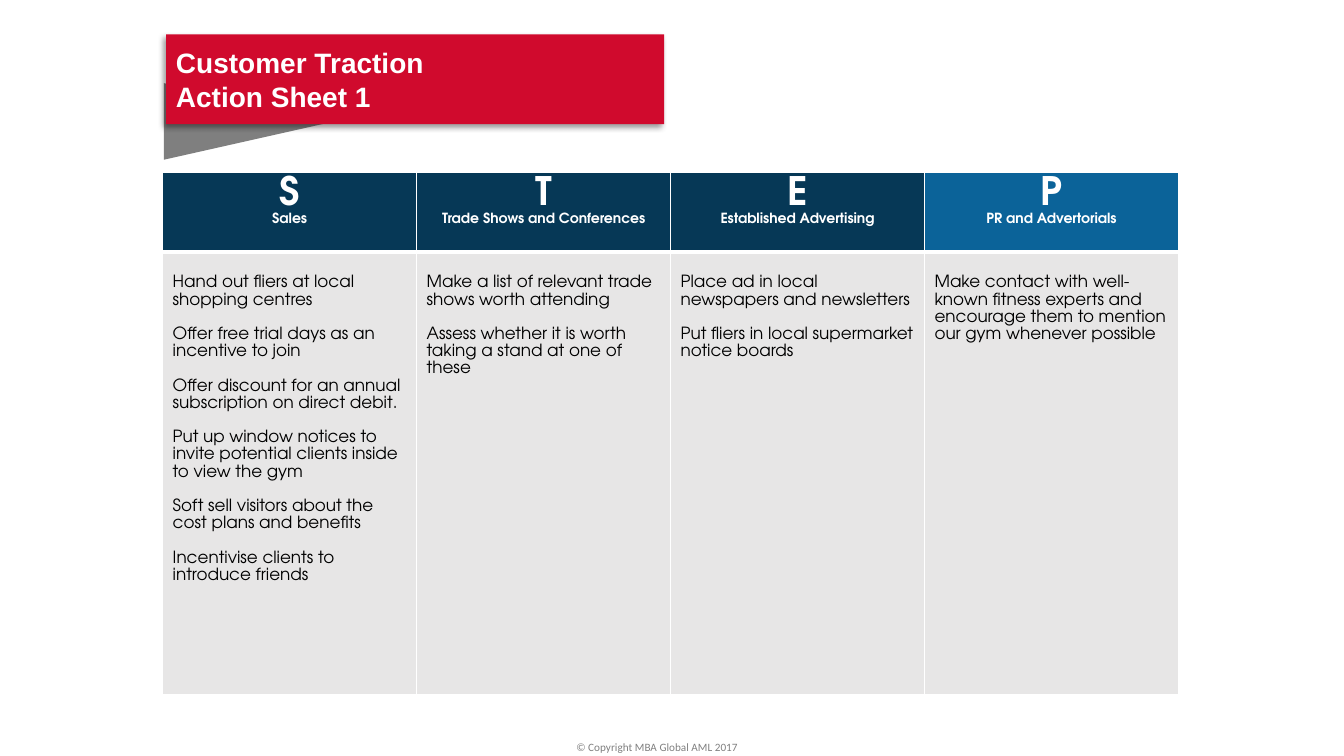
from dataclasses import dataclass

from lxml.etree import SubElement
from pptx import Presentation
from pptx.dml.color import RGBColor
from pptx.enum.shapes import MSO_SHAPE
from pptx.enum.text import MSO_ANCHOR, MSO_AUTO_SIZE, PP_ALIGN
from pptx.oxml.ns import qn
from pptx.util import Pt


@dataclass(frozen=True)
class Theme:
    """Colours, fonts and type sizes of the action sheet."""
    red: str = "D00A2D"
    grey: str = "7F7F7F"
    navy: str = "063856"
    blue: str = "0B6399"
    panel: str = "E7E6E6"
    white: str = "FFFFFF"
    black: str = "000000"
    muted: str = "808080"
    title_font: str = "Arial"
    table_font: str = "TeX Gyre Adventor"
    footer_font: str = "Calibri"
    title: int = 20
    letter: int = 28
    label: int = 10
    body: int = 12
    footer: int = 8


COLUMNS = [
    ("S", "Sales", [
        "Hand out fliers at local shopping centres",
        "Offer free trial days as an incentive to join",
        "Offer discount for an annual subscription on direct debit.",
        "Put up window notices to invite potential clients inside to view the gym",
        "Soft sell visitors about the cost plans and benefits",
        "Incentivise clients to introduce friends"]),
    ("T", "Trade Shows and Conferences", [
        "Make a list of relevant trade shows worth attending",
        "Assess whether it is worth taking a stand at one of these"]),
    ("E", "Established Advertising", [
        "Place ad in local newspapers and newsletters",
        "Put fliers in local supermarket notice boards"]),
    ("P", "PR and Advertorials", [
        "Make contact with well-known fitness experts and encourage them "
        "to mention our gym whenever possible"]),
]


class Sheet:
    """Draws styled elements on one slide."""

    def __init__(self, s, theme):
        """Keep the slide and its theme."""
        self.s, self.theme = s, theme

    def text(self, tf, lines, font, color, bold=False, **para):
        """Fill a text frame with (text, size) lines."""
        for i, (line, size) in enumerate(lines):
            p = tf.paragraphs[0] if i == 0 else tf.add_paragraph()
            for key, value in para.items():
                if i or key != "space_before":
                    setattr(p, key, value)
            r = p.add_run()
            r.text = line
            for key, value in dict(name=font, size=Pt(size), bold=bold).items():
                setattr(r.font, key, value)
            r.font.color.rgb = RGBColor.from_string(color)

    def shape(self, kind, box, fill):
        """Add a flat preset shape."""
        sp = self.s.shapes.add_shape(kind, *map(Pt, box))
        sp.shadow.inherit = False
        sp.fill.solid()
        sp.fill.fore_color.rgb = RGBColor.from_string(fill)
        sp.line.fill.background()
        return sp

    def shadow(self, sp, blur, dist, angle, alpha):
        """Give a shape an outer shadow."""
        effects = sp._element.spPr.find(qn("a:effectLst"))
        outer = SubElement(effects, qn("a:outerShdw"), blurRad=str(Pt(blur)),
                           dist=str(Pt(dist)), dir=str(angle * 60000),
                           algn="tr", rotWithShape="0")
        clr = SubElement(outer, qn("a:srgbClr"), val=self.theme.black)
        SubElement(clr, qn("a:alpha"), val=str(alpha * 1000))

    def banner(self, box, lines):
        """Add the red title banner."""
        t = self.theme
        sp = self.shape(MSO_SHAPE.RECTANGLE, box, t.red)
        self.shadow(sp, 4, 3, 135, 40)
        sp.text_frame.vertical_anchor = MSO_ANCHOR.MIDDLE
        self.text(sp.text_frame, [(line, t.title) for line in lines],
                  t.title_font, t.white, True, alignment=PP_ALIGN.LEFT)

    def cell(self, cell, fill, bottom=1):
        """Set the borders and fill of a table cell."""
        tcPr = cell._tc.get_or_add_tcPr()
        for side, width in dict(L=1, R=1, T=1, B=bottom).items():
            ln = SubElement(tcPr, qn(f"a:ln{side}"), w=str(Pt(width)))
            solid = SubElement(ln, qn("a:solidFill"))
            SubElement(solid, qn("a:srgbClr"), val=self.theme.white)
        cell.fill.solid()
        cell.fill.fore_color.rgb = RGBColor.from_string(fill)

    def table(self, box, heights, columns):
        """Add the table of lettered columns."""
        t = self.theme
        tbl = self.s.shapes.add_table(2, len(columns), *map(Pt, box)).table
        tbl.horz_banding = False
        for row, height in zip(tbl.rows, heights):
            row.height = Pt(height)
        for i, (letter, label, actions) in enumerate(columns):
            tbl.columns[i].width = Pt(box[2] / len(columns))
            head, body = tbl.cell(0, i), tbl.cell(1, i)
            last = i == len(columns) - 1
            self.cell(head, t.blue if last else t.navy, bottom=3)
            self.text(head.text_frame, [(letter, t.letter), (label, t.label)],
                      t.table_font, t.white, True, alignment=PP_ALIGN.CENTER)
            self.cell(body, t.panel)
            body.margin_top = Pt(15.9)
            self.text(body.text_frame, [(action, t.body) for action in actions],
                      t.table_font, t.black, line_spacing=1.1,
                      space_before=Pt(12.3))

    def footer(self, box, line):
        """Add the copyright line."""
        t = self.theme
        tf = self.s.shapes.add_textbox(*map(Pt, box)).text_frame
        for key, value in dict(word_wrap=False,
                               auto_size=MSO_AUTO_SIZE.SHAPE_TO_FIT_TEXT).items():
            setattr(tf, key, value)
        self.text(tf, [(line, t.footer)], t.footer_font, t.muted)


def main():
    """Build and save the slide."""
    prs = Presentation()
    prs.slide_width, prs.slide_height = Pt(960), Pt(540)
    theme = Theme()
    sheet = Sheet(prs.slides.add_slide(prs.slide_layouts[6]), theme)
    sheet.table((116.2, 122.8, 725.6, 373.3), (57, 316.3), COLUMNS)
    fold = sheet.shape(MSO_SHAPE.FLOWCHART_EXTRACT,
                       (150.5, 25.9, 54.7, 121.7), theme.grey)
    fold.rotation = 90
    sheet.banner((118.6, 24.6, 355.8, 64.1),
                 ["Customer Traction", "Action Sheet 1"])
    sheet.footer((404.6, 525, 151.2, 17), "© Copyright MBA Global AML 2017")
    prs.save("out.pptx")


if __name__ == "__main__":
    main()
